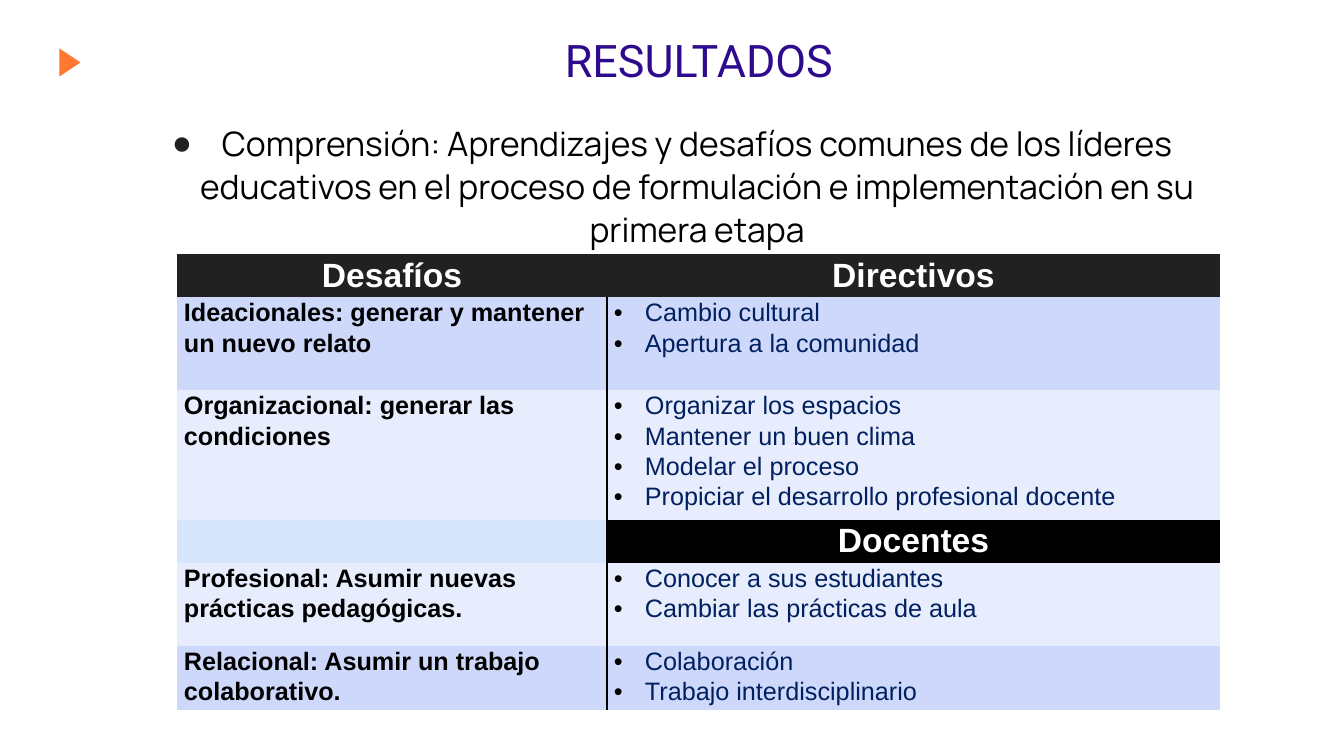
"""Builds the results slide: a title, a summary point and a table of challenges."""
from dataclasses import dataclass

from lxml import etree
from pptx import Presentation, util as u
from pptx.dml.color import RGBColor
from pptx.enum import shapes, text
from pptx.oxml.ns import qn

TITLE = "RESULTADOS"
SUMMARY = ("Comprensión: Aprendizajes y desafíos comunes de los líderes educativos "
           "en el proceso de formulación e implementación en su primera etapa")


@dataclass(frozen=True)
class Theme:
    """Colours, fonts and type sizes."""
    title: str = "2E0A8C"
    accent: str = "FF7731"
    dark: str = "212121"
    black: str = "000000"
    white: str = "FFFFFF"
    navy: str = "002060"
    strong: str = "CDD8FB"
    soft: str = "E8EDFD"
    pale: str = "D8E6FC"
    title_font: str = "Roboto"
    body_font: str = "Manrope"
    table_font: str = "Arial"
    title_size: int = 32
    head_size: int = 24
    cell_size: int = 18
    spacing: float = 1.07


THEME = Theme()
HEADS = [("Desafíos", "Directivos", THEME.dark, THEME.dark, 40),
         ("", "Docentes", THEME.pale, THEME.black, 40)]
CHALLENGES = [
    ("Ideacionales: generar y mantener un nuevo relato",
     ["Cambio cultural", "Apertura a la comunidad"], THEME.strong, 93),
    ("Organizacional: generar las condiciones",
     ["Organizar los espacios", "Mantener un buen clima", "Modelar el proceso",
      "Propiciar el desarrollo profesional docente"], THEME.soft, 121),
    ("Profesional: Asumir nuevas prácticas pedagógicas.",
     ["Conocer a sus estudiantes", "Cambiar las prácticas de aula"], THEME.soft, 83),
    ("Relacional: Asumir un trabajo colaborativo.",
     ["Colaboración", "Trabajo interdisciplinario"], THEME.strong, 60),
]
ROWS = [HEADS[0], *CHALLENGES[:2], HEADS[1], *CHALLENGES[2:]]
COLUMNS = (430, 613)
PLAIN_TABLE = "{2D5ABB26-0587-4C30-8999-92F81FD0307C}"


def px(length):
    """Turn px into EMU."""
    return u.Emu(round(length * 914400 / 100.8))


def child(parent, tag, **attributes):
    """Append one drawing element."""
    return etree.SubElement(parent, qn(tag), attributes)


def paint(target, color):
    """Give a shape or cell a solid fill."""
    target.fill.solid()
    target.fill.fore_color.rgb = RGBColor.from_string(color)


def set_frame(frame, inset_x, inset_y):
    """Set wrapping and insets of a text frame."""
    frame.word_wrap = True
    frame.vertical_anchor = text.MSO_ANCHOR.TOP
    frame.margin_left = frame.margin_right = px(inset_x)
    frame.margin_top = frame.margin_bottom = px(inset_y)


def add_span(para, words, font, size, color, bold=False, center=False):
    """Add one formatted run to a paragraph."""
    para.alignment = text.PP_ALIGN.CENTER if center else text.PP_ALIGN.LEFT
    para.space_before = para.space_after = u.Pt(0)
    span = para.add_run()
    span.text = words
    span.font.name, span.font.size, span.font.bold = font, u.Pt(size), bold
    span.font.color.rgb = RGBColor.from_string(color)
    return span


def add_bullet(para, mark, color, indent):
    """Give a paragraph a hanging bullet."""
    para.line_spacing = THEME.spacing
    para.space_before = para.space_after = u.Pt(0)
    props = para._p.get_or_add_pPr()
    props.set("marL", str(px(indent)))
    props.set("indent", str(-px(indent)))
    child(child(props, "a:buClr"), "a:srgbClr", val=color)
    child(props, "a:buFont", typeface=THEME.table_font)
    child(props, "a:buChar", char=mark)


def add_title(page):
    """Fill the title placeholder and give its text a soft shadow."""
    box = page.shapes.title
    box.left, box.top, box.width, box.height = map(px, (99, 23, 1200, 57))
    set_frame(box.text_frame, 10, 10)
    box.text_frame.auto_size = text.MSO_AUTO_SIZE.NONE
    para = box.text_frame.paragraphs[0]
    para.line_spacing = 1.0
    span = add_span(para, TITLE, THEME.title_font, THEME.title_size, THEME.title, center=True)
    props = span.font._element
    effects = child(props, "a:effectLst")
    shadow = child(effects, "a:outerShdw", blurRad="38100", dist="38100", dir="5400000")
    child(child(shadow, "a:srgbClr", val=THEME.black), "a:alpha", val="35000")
    props.find(qn("a:latin")).addprevious(effects)


def add_marker(page):
    """Draw the triangle beside the title."""
    marker = page.shapes.add_shape(shapes.MSO_SHAPE.ISOSCELES_TRIANGLE,
                                   *map(px, (56, 52, 28, 21)))
    marker.rotation = 90
    marker.shadow.inherit = False
    paint(marker, THEME.accent)
    marker.line.fill.background()


def add_summary(page):
    """Write the summary point."""
    box = page.shapes.add_textbox(*map(px, (115, 110, 1114, 449)))
    set_frame(box.text_frame, 10, 10)
    para = box.text_frame.paragraphs[0]
    add_bullet(para, "●", THEME.dark, 50)
    add_span(para, SUMMARY, THEME.body_font, THEME.head_size, THEME.black, center=True)


def add_divider(cell):
    """Draw the line at the left of a cell."""
    line = etree.Element(qn("a:lnL"), w=str(u.Pt(1)))
    child(child(line, "a:solidFill"), "a:srgbClr", val=THEME.black)
    cell._tc.get_or_add_tcPr().insert(0, line)


def write_head(cell, words):
    """Write a heading cell."""
    para = cell.text_frame.paragraphs[0]
    para.line_spacing = THEME.spacing
    if words:
        add_span(para, words, THEME.table_font, THEME.head_size, THEME.white, True, True)


def write_challenge(cells, name, points):
    """Write a challenge and its bulleted points."""
    para = cells[0].text_frame.paragraphs[0]
    para.line_spacing = THEME.spacing
    add_span(para, name, THEME.table_font, THEME.cell_size, THEME.black, True)
    frame = cells[1].text_frame
    for index, point in enumerate(points):
        para = frame.add_paragraph() if index else frame.paragraphs[0]
        add_bullet(para, "•", THEME.black, 31)
        add_span(para, point, THEME.table_font, THEME.cell_size, THEME.navy)


def add_challenges(page):
    """Build the table of challenges."""
    heights = [row[-1] for row in ROWS]
    table = page.shapes.add_table(len(ROWS), len(COLUMNS), px(177), px(254),
                                  px(sum(COLUMNS)), px(sum(heights))).table
    table.horz_banding = False
    table._tbl.tblPr.find(qn("a:tableStyleId")).text = PLAIN_TABLE
    for column, width in zip(table.columns, COLUMNS):
        column.width = px(width)
    for index, (row, content) in enumerate(zip(table.rows, ROWS)):
        row.height = px(content[-1])
        cells = list(row.cells)
        fills = content[2:4] if content in HEADS else (content[2], content[2])
        for cell, fill in zip(cells, fills):
            cell.margin_left = cell.margin_right = px(7)
            cell.margin_top = cell.margin_bottom = 0
            paint(cell, fill)
        if content in HEADS:
            for cell, words in zip(cells, content):
                write_head(cell, words)
        else:
            write_challenge(cells, *content[:2])
        if index:
            add_divider(cells[1])


def main():
    """Build and save the deck."""
    deck = Presentation()
    deck.slide_width, deck.slide_height = px(1344), px(756)
    page = deck.slides.add_slide(deck.slide_layouts[5])
    add_marker(page)
    add_title(page)
    add_summary(page)
    add_challenges(page)
    deck.save("out.pptx")


if __name__ == "__main__":
    main()
